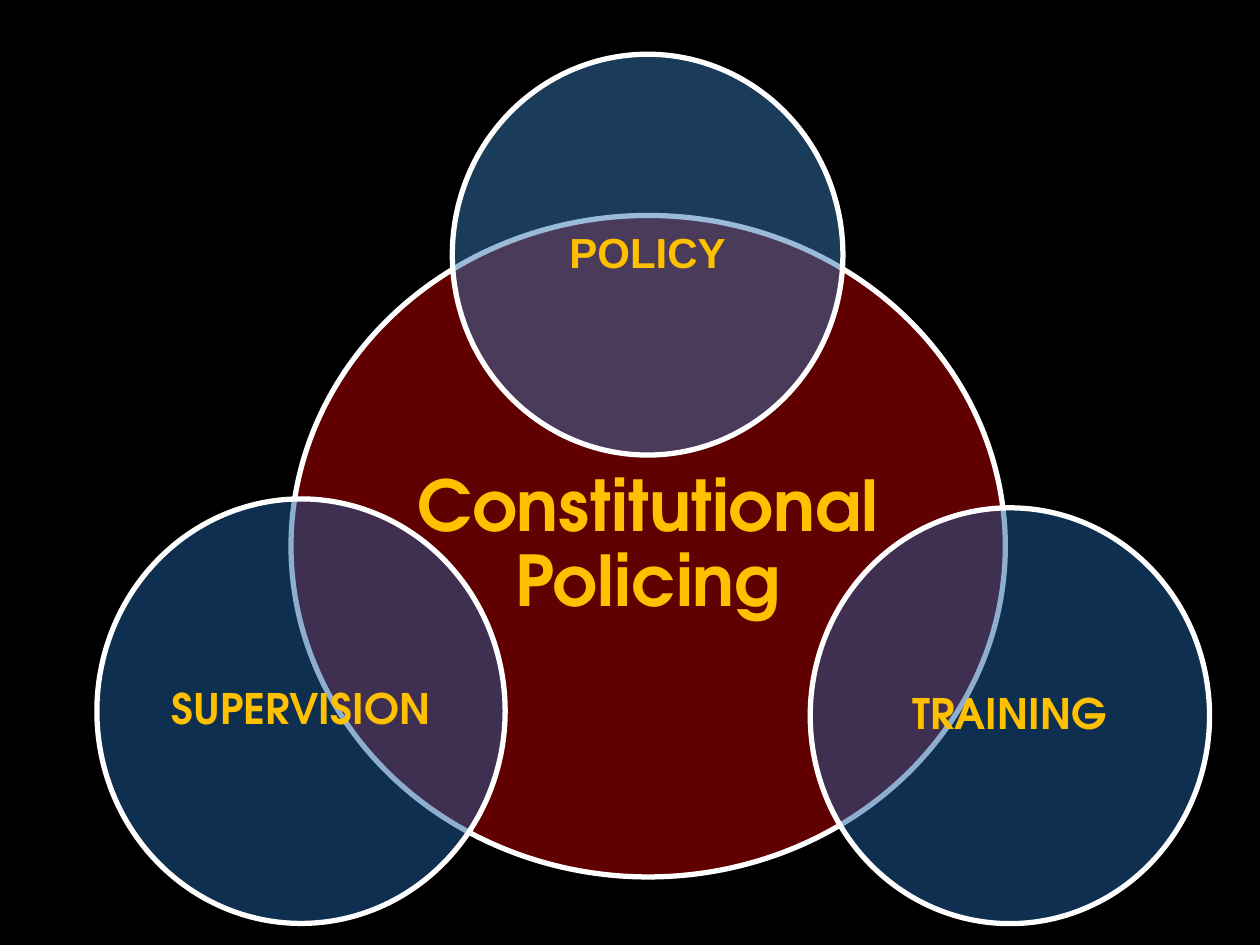
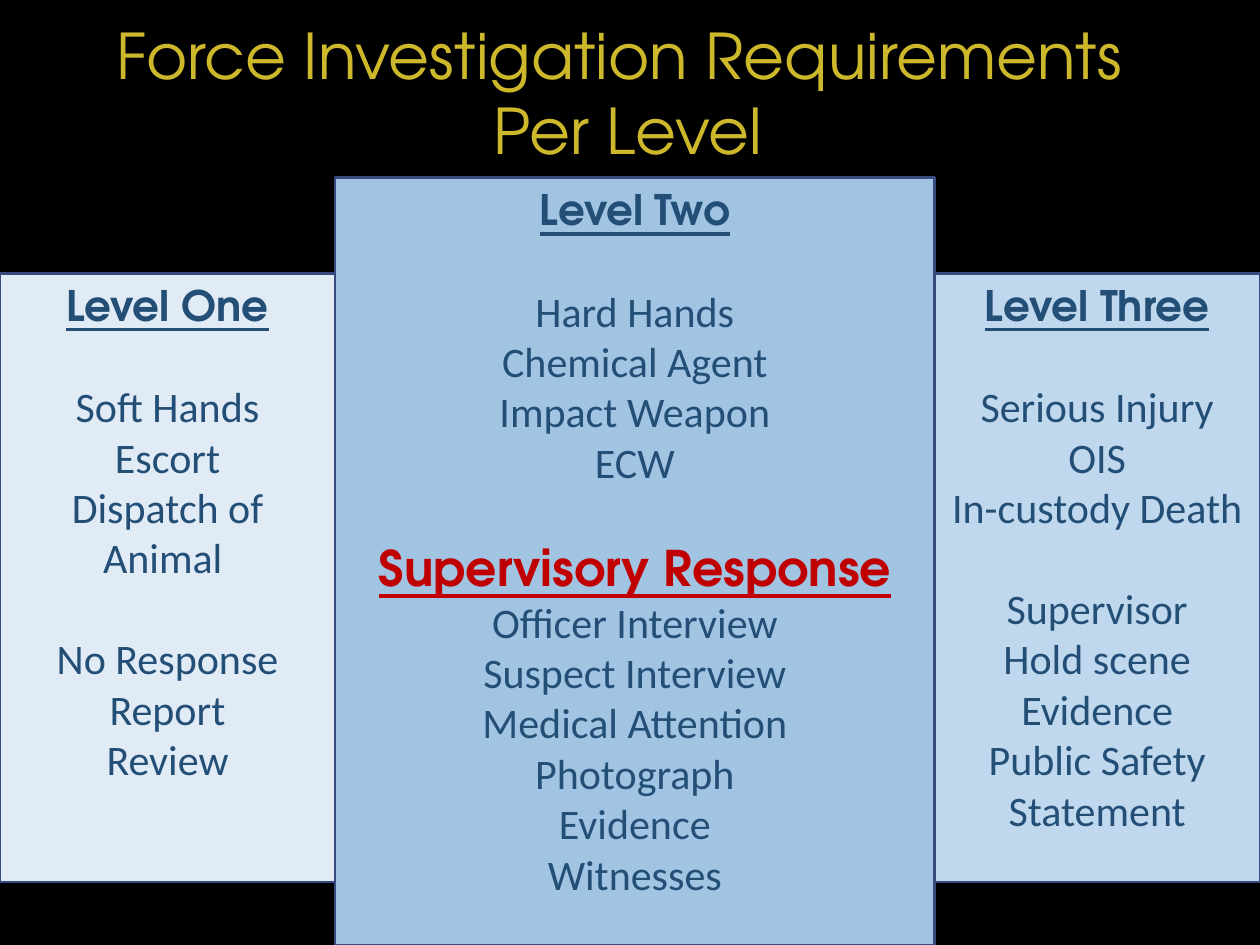
"""Builds two slides: policing circles and force levels."""
import pptx
import pptx.dml.color
import pptx.enum.shapes
import pptx.enum.text
import pptx.oxml
import pptx.util

Pt = pptx.util.Pt
SHAPE = pptx.enum.shapes.MSO_SHAPE
ALIGN = pptx.enum.text.PP_ALIGN
ANCHOR = pptx.enum.text.MSO_ANCHOR

HEAD, BODY = "TeX Gyre Adventor", "Calibri"
BLACK, WHITE, GOLD, SAND = "000000", "FFFFFF", "FFC000", "CDB82B"
RED, NAVY, EDGE = "C00000", "234F77", "374B7F"
STEEL, BLUE = "3477B2", "1F5FA0"
WIDE, HIGH = 720, 540
GAP = 29

CIRCLES = [
    ("Constitutional Policing", (166.3, 123.1, 408.2, 378), RED, HEAD, 40),
    ("POLICY", (258.5, 31, 223.2, 229), STEEL, "Arial", 24),
    ("TRAINING", (463, 290.2, 228.2, 237.6), BLUE, HEAD, 24),
    ("SUPERVISION", (55.4, 285.1, 233.3, 242.6), BLUE, HEAD, 24),
]

ONE = [["Soft Hands", "Escort", "Dispatch of Animal "],
       ["No Response", "Report", "Review"]]
TWO = [["Hard Hands", "Chemical Agent", "Impact Weapon", "ECW"],
       ["Supervisory Response", "Officer Interview", "Suspect Interview",
        "Medical Attention", "Photograph", "Evidence", "Witnesses"]]
THREE = [["Serious Injury", "OIS", "In-custody Death"],
         ["Supervisor", "Hold scene", "Evidence",
          "Public Safety Statement"]]
LEFT, RIGHT = 191.5, 534
PANELS = [
    ("Level One", ONE, (0, 156.2, LEFT, 347.8), "E0EBF6"),
    ("Level Three", THREE, (RIGHT, 156.2, WIDE - RIGHT, 347.8), "C0D8ED"),
    ("Level Two", TWO, (LEFT, 101.5, RIGHT - LEFT, HIGH - 101.5), "A1C4E3"),
]


def paint(fill, code):
    """Make a fill solid in a hex colour."""
    fill.solid()
    fill.fore_color.rgb = pptx.dml.color.RGBColor.from_string(code)


def fade(shape, share):
    """Set the opacity of a solid fill in percent."""
    tint = shape.fill._xPr.find(".//" + pptx.oxml.ns.qn("a:srgbClr"))
    alpha = pptx.oxml.parse_xml(
        f'<a:alpha {pptx.oxml.ns.nsdecls("a")} val="{share * 1000}"/>')
    tint.append(alpha)


def style(para, face, size, code, strong=False, under=False):
    """Centre a paragraph and format its runs."""
    para.alignment = ALIGN.CENTER
    for run in para.runs:
        font = run.font
        font.name, font.size = face, Pt(size)
        font.bold, font.underline = strong, under
        paint(font.fill, code)


def add_slide(deck):
    """Add a blank black slide."""
    slide = deck.slides.add_slide(deck.slide_layouts[6])
    paint(slide.background.fill, BLACK)
    return slide


def add_shape(slide, kind, box, code, edge, width):
    """Add a filled and outlined shape without shadow."""
    shape = slide.shapes.add_shape(kind, *map(Pt, box))
    shape.shadow.inherit = False
    paint(shape.fill, code)
    paint(shape.line.fill, edge)
    shape.line.width = Pt(width)
    shape.text_frame.word_wrap = True
    return shape


def add_circle(slide, text, box, code, face, size):
    """Add a half-clear ellipse with a bold label."""
    shape = add_shape(slide, SHAPE.OVAL, box, code, WHITE, 3)
    fade(shape, 50)
    frame = shape.text_frame
    frame.margin_left = frame.margin_right = Pt(3)
    frame.margin_top = frame.margin_bottom = Pt(3)
    frame.vertical_anchor = ANCHOR.MIDDLE
    frame.text = text
    para = frame.paragraphs[0]
    para.line_spacing = 0.9
    style(para, face, size, GOLD, strong=True)


def add_panel(slide, head, groups, box, code):
    """Add a level panel with a heading and spaced groups of lines."""
    frame = add_shape(slide, SHAPE.RECTANGLE, box, code, EDGE, 1.5).text_frame
    frame.vertical_anchor = ANCHOR.TOP
    frame.text = head
    style(frame.paragraphs[0], HEAD, 24, NAVY, True, True)
    for group in groups:
        for spot, line in enumerate(group):
            para = frame.add_paragraph()
            para.text = line
            if spot == 0:
                para.space_before = Pt(GAP)
            if line == "Supervisory Response":
                style(para, HEAD, 28, RED, True, True)
            else:
                style(para, BODY, 24, NAVY)


def add_title(slide, text):
    """Add the slide title, one paragraph per line."""
    frame = slide.shapes.add_textbox(
        Pt(2.9), Pt(5.8), Pt(711.4), Pt(94.3)).text_frame
    frame.word_wrap = True
    frame.text = text
    for para in frame.paragraphs:
        style(para, HEAD, 36, SAND)


def main():
    """Build both slides and save the deck."""
    deck = pptx.Presentation()
    deck.slide_width, deck.slide_height = Pt(WIDE), Pt(HIGH)
    slide = add_slide(deck)
    for item in CIRCLES:
        add_circle(slide, *item)
    slide = add_slide(deck)
    for item in PANELS:
        add_panel(slide, *item)
    add_title(slide, "Force Investigation Requirements \nPer Level")
    deck.save("out.pptx")


if __name__ == "__main__":
    main()
